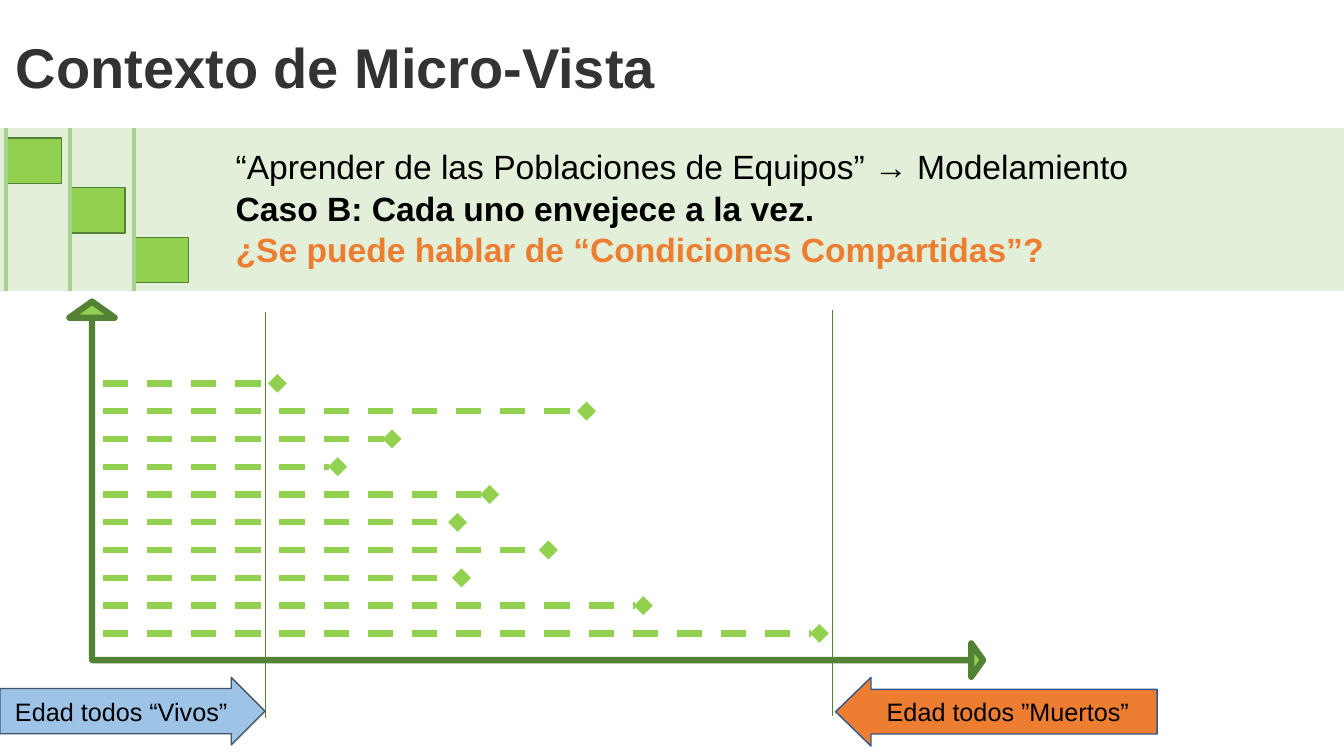
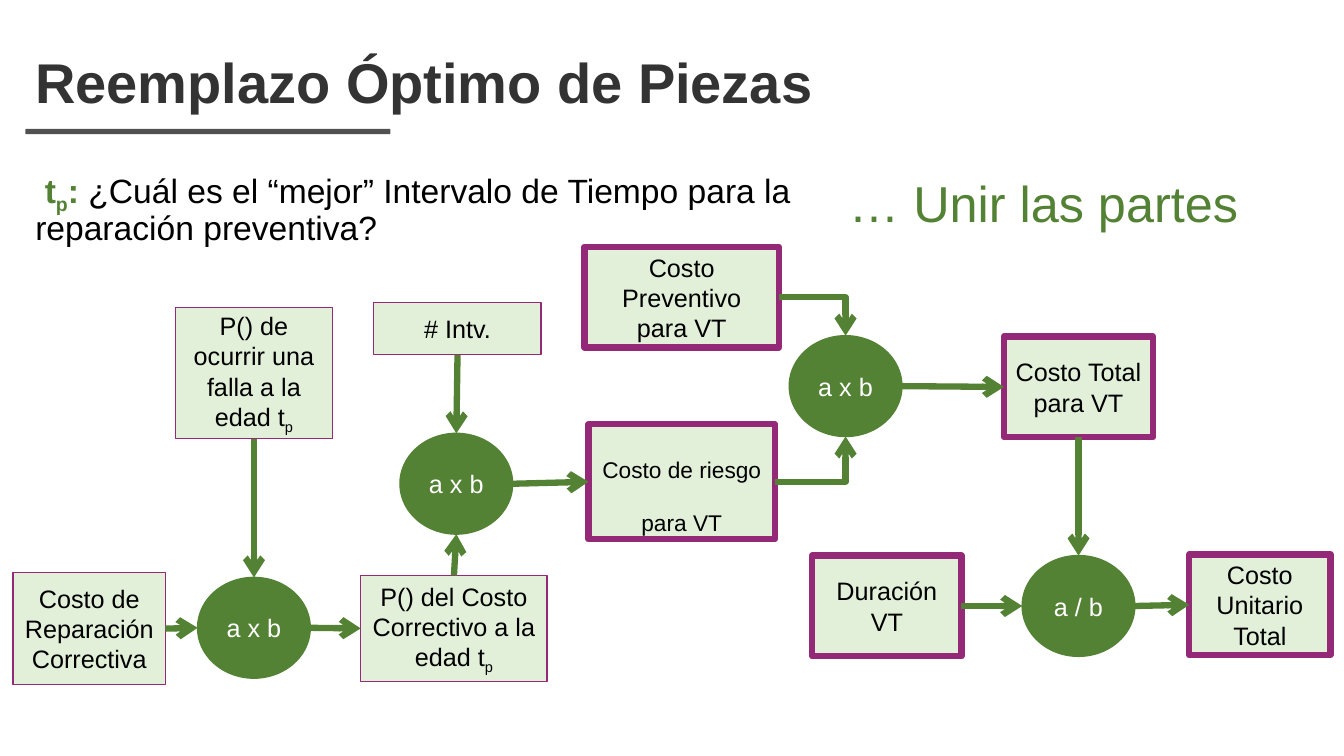
"""Builds two slides on ageing populations of equipment and optimal part replacement."""
from dataclasses import dataclass
from enum import IntEnum

from lxml import etree
from pptx import Presentation
from pptx import util as u
from pptx.dml.color import RGBColor
from pptx.enum import dml, shapes, text
from pptx.oxml.ns import qn
from pptx.slide import Slide

COLORS = {
    "title": "333333", "rule": "515151", "ink": "000000", "white": "FFFFFF",
    "pale": "E2F0D9", "lime": "92D050", "leaf": "A9D18E", "green": "548235",
    "purple": "942978", "orange": "ED7D31", "sky": "9DC3E6",
    "slate": "44546A", "navy": "325491",
}
FONT = "Arial"
SUBSCRIPT = "-25000"
KIND = shapes.MSO_SHAPE
CENTER = text.PP_ALIGN.CENTER


class Side(IntEnum):
    """Connection sites of a rectangle."""
    TOP = 0
    LEFT = 1
    BOTTOM = 2
    RIGHT = 3


@dataclass(frozen=True)
class Box:
    """Place of a shape in centimetres."""
    left: float
    top: float
    width: float
    height: float

    def emu(self) -> list[int]:
        """Return the place as lengths for python-pptx."""
        return [u.Cm(v) for v in (self.left, self.top, self.width, self.height)]

    def side(self, side: Side) -> tuple[float, float]:
        """Return the middle of one side."""
        x, y = self.left + self.width / 2, self.top + self.height / 2
        return {
            Side.TOP: (x, self.top), Side.LEFT: (self.left, y),
            Side.BOTTOM: (x, self.top + self.height), Side.RIGHT: (self.left + self.width, y),
        }[side]


@dataclass(frozen=True)
class Node:
    """Cost box or operator of the calculation."""
    name: str
    label: str
    box: Box
    border: float = 1
    sub: str = ""
    operator: bool = False


@dataclass(frozen=True)
class Link:
    """Arrow from one node to another."""
    start: str
    leaves: Side
    end: str
    enters: Side


@dataclass(frozen=True)
class AgeArrow:
    """Labelled block arrow below the age axis."""
    label: str
    kind: shapes.MSO_SHAPE
    box: Box
    adjustments: tuple[float, float]
    fill: str
    line: str


LIFE_ENDS = (6.99, 14.78, 9.88, 8.51, 12.34, 11.53, 13.82, 11.63, 16.21, 20.65)

AGE_ARROWS = (
    AgeArrow("Edad todos “Vivos”", KIND.RIGHT_ARROW, Box(0, 17.07, 6.68, 1.7),
             (0.67, 0.5), "sky", "slate"),
    AgeArrow("Edad todos ”Muertos”", KIND.LEFT_ARROW, Box(21.06, 17.07, 8.1, 1.73),
             (0.65, 0.515), "orange", "navy"),
)


def operator(name: str, label: str, left: float, top: float) -> Node:
    """Return a round operator node of the common size."""
    return Node(name, label, Box(left, top, 2.84, 2.54), operator=True)


NODES = (
    Node("reparación", "Costo de Reparación Correctiva", Box(0.33, 14.43, 3.84, 2.82)),
    Node("falla", "P() de ocurrir una falla a la edad t", Box(4.42, 7.75, 3.96, 3.3), sub="p"),
    Node("correctivo", "P() del Costo Correctivo a la edad t", Box(9.09, 14.5, 4.7, 2.67), sub="p"),
    Node("intervalos", "# Intv.", Box(9.42, 7.62, 4.22, 1.32)),
    Node("riesgo", "Costo de riesgo para VT", Box(14.83, 10.69, 4.7, 2.9), 4.5),
    Node("preventivo", "Costo Preventivo para VT", Box(14.73, 6.22, 4.9, 2.54), 4.5),
    Node("total", "Costo Total para VT", Box(25.3, 8.48, 3.76, 2.54), 4.5),
    Node("duración", "Duración VT", Box(20.47, 14, 3.76, 2.54), 4.5),
    Node("unitario", "Costo Unitario Total", Box(29.97, 13.97, 3.56, 2.54), 4.5),
    operator("por falla", "a x b", 4.98, 14.55),
    operator("por intervalo", "a x b", 10.08, 10.92),
    operator("por ciclo", "a x b", 19.89, 8.46),
    operator("por duración", "a / b", 25.76, 14),
)

LINKS = (
    Link("reparación", Side.RIGHT, "por falla", Side.LEFT),
    Link("falla", Side.BOTTOM, "por falla", Side.TOP),
    Link("por falla", Side.RIGHT, "correctivo", Side.LEFT),
    Link("correctivo", Side.TOP, "por intervalo", Side.BOTTOM),
    Link("intervalos", Side.BOTTOM, "por intervalo", Side.TOP),
    Link("por intervalo", Side.RIGHT, "riesgo", Side.LEFT),
    Link("preventivo", Side.RIGHT, "por ciclo", Side.TOP),
    Link("riesgo", Side.RIGHT, "por ciclo", Side.BOTTOM),
    Link("por ciclo", Side.RIGHT, "total", Side.LEFT),
    Link("total", Side.BOTTOM, "por duración", Side.TOP),
    Link("duración", Side.RIGHT, "por duración", Side.LEFT),
    Link("por duración", Side.RIGHT, "unitario", Side.LEFT),
)


def rgb(name: str) -> RGBColor:
    """Look up a colour."""
    return RGBColor.from_string(COLORS[name])


def style(font, size: float, color: str, bold: bool = False) -> None:
    """Set the face, size, colour and weight of a font."""
    font.name, font.size, font.bold = FONT, u.Pt(size), bold
    font.color.rgb = rgb(color)


def lower(run) -> None:
    """Turn a run into a subscript."""
    run.font._element.set("baseline", SUBSCRIPT)


def add_block(slide: Slide, kind, box: Box, fill: str, line: str = "", width: float = 1):
    """Add a filled preset shape without shadow."""
    block = slide.shapes.add_shape(kind, *box.emu())
    block.shadow.inherit = False
    block.fill.solid()
    block.fill.fore_color.rgb = rgb(fill)
    if line:
        block.line.color.rgb = rgb(line)
        block.line.width = u.Pt(width)
    else:
        block.line.fill.background()
    return block


def add_label(block, label: str, color: str = "ink", size: float = 18):
    """Write a centred label in a shape and return its paragraph."""
    block.text_frame.word_wrap = True
    block.text_frame.vertical_anchor = text.MSO_ANCHOR.MIDDLE
    paragraph = block.text_frame.paragraphs[0]
    paragraph.alignment = CENTER
    paragraph.add_run().text = label
    style(paragraph.font, size, color)
    return paragraph


def add_line(slide: Slide, start: tuple[float, float], end: tuple[float, float], color: str,
             width: float, tail: str = "", dashed: bool = False, bent: bool = False):
    """Add a connector, with an optional arrowhead, dash or single bend."""
    kind = shapes.MSO_CONNECTOR.ELBOW if bent else shapes.MSO_CONNECTOR.STRAIGHT
    connector = slide.shapes.add_connector(kind, *(u.Cm(v) for v in (*start, *end)))
    connector.line.color.rgb = rgb(color)
    connector.line.width = u.Pt(width)
    properties = connector._element.spPr
    if dashed:
        connector.line.dash_style = dml.MSO_LINE.DASH
    if tail:
        etree.SubElement(properties.find(qn("a:ln")), qn("a:tailEnd"), type=tail)
    if bent:
        properties.find(qn("a:prstGeom")).set("prst", "bentConnector2")
    etree.SubElement(properties, qn("a:effectLst"))
    return connector


def add_text(slide: Slide, box: Box):
    """Add a wrapping text box and return its frame."""
    frame = slide.shapes.add_textbox(*box.emu()).text_frame
    frame.word_wrap = True
    frame.paragraphs[0].line_spacing = 0.9
    return frame


def add_slide(deck, title: str, left: float, top: float) -> Slide:
    """Add a blank slide with the shared rule and title."""
    slide = deck.slides.add_slide(deck.slide_layouts[6])
    add_block(slide, KIND.ROUNDED_RECTANGLE, Box(0.64, 3.25, 9.2, 0.13), "rule")
    frame = add_text(slide, Box(left, top, 27.1, 2.39))
    frame.vertical_anchor = text.MSO_ANCHOR.BOTTOM
    frame.paragraphs[0].text = title
    style(frame.paragraphs[0].font, 40, "title", True)
    return slide


def add_band(slide: Slide) -> None:
    """Draw the pale band with its staggered squares and message."""
    band = Box(0, 3.23, 33.87, 4.1)
    add_block(slide, KIND.RECTANGLE, band, "pale")
    for step in range(3):
        square = Box(0.18 + 1.6 * step, 3.48 + 1.25 * step, 1.37, 1.14)
        add_block(slide, KIND.RECTANGLE, square, "lime", "green")
    for step in range(3):
        x = 0.15 + 1.61 * step
        add_line(slide, (x, band.top), (x, band.top + band.height), "leaf", 3)
    message = (
        ("“Aprender de las Poblaciones de Equipos” → Modelamiento", "ink", False),
        ("Caso B: Cada uno envejece a la vez.", "ink", True),
        ("¿Se puede hablar de “Condiciones Compartidas”?", "orange", True),
    )
    frame = add_text(slide, Box(5.69, 3.66, 28.17, 2.72))
    for index, (sentence, color, bold) in enumerate(message):
        paragraph = frame.add_paragraph() if index else frame.paragraphs[0]
        paragraph.text = sentence
        paragraph.line_spacing = 0.9
        if index:
            paragraph.space_before = u.Pt(4)
        style(paragraph.font, 24, color, bold)


def add_lives(slide: Slide) -> None:
    """Draw the axes, the life of each unit and the age limits."""
    for box, turn in ((Box(1.75, 7.6, 1.14, 9.02), 0), (Box(13.13, 5.41, 0.84, 22.45), 90)):
        axis = add_block(slide, KIND.UP_ARROW, box, "lime", "green", 4.5)
        axis.rotation = turn
        axis.adjustments[0], axis.adjustments[1] = 0, 0.357
    for row, end in enumerate(LIFE_ENDS):
        y = 9.66 + 0.7 * row
        add_line(slide, (2.59, y), (end, y), "lime", 4.5, "diamond", dashed=True)
    for x, top in ((6.68, 7.87), (20.98, 7.82)):
        add_line(slide, (x, top), (x, top + 10.21), "green", 0.5)
    for arrow in AGE_ARROWS:
        block = add_block(slide, arrow.kind, arrow.box, arrow.fill, arrow.line)
        block.adjustments[0], block.adjustments[1] = arrow.adjustments
        add_label(block, arrow.label)


def add_question(slide: Slide) -> None:
    """Write the question and the call to join the parts."""
    question = add_text(slide, Box(0.64, 4.16, 19.94, 2.6)).paragraphs[0]
    question._p.get_or_add_pPr().set("indent", str(u.Cm(0.24)))
    pieces = (
        ("t", "green", True), ("p", "green", True), (": ", "green", True),
        ("¿Cuál es el “mejor” Intervalo de Tiempo para la reparación preventiva?", "ink", False),
    )
    for words, color, bold in pieces:
        run = question.add_run()
        run.text = words
        style(run.font, 24, color, bold)
    lower(question.runs[1])
    call = add_text(slide, Box(17.93, 4.39, 16.74, 2.03)).paragraphs[0]
    call.text = "… Unir las partes"
    call.alignment = CENTER
    style(call.font, 36, "green")


def add_node(slide: Slide, node: Node):
    """Draw one cost box or operator."""
    if node.operator:
        block = add_block(slide, KIND.OVAL, node.box, "green", "green")
        add_label(block, node.label, "white")
        return block
    block = add_block(slide, KIND.RECTANGLE, node.box, "pale", "purple", node.border)
    lowered = node.name == "riesgo"
    label = add_label(block, node.label, size=28 if lowered else 18)
    if lowered:
        block.text_frame.vertical_anchor = text.MSO_ANCHOR.TOP
        lower(label.runs[0])
    if node.sub:
        run = label.add_run()
        run.text = node.sub
        lower(run)
    return block


def add_flow(slide: Slide) -> None:
    """Draw the nodes and join them with arrows."""
    nodes = {node.name: node for node in NODES}
    blocks = {node.name: add_node(slide, node) for node in NODES}
    for link in LINKS:
        start, end = nodes[link.start], nodes[link.end]
        bent = link.leaves % 2 != link.enters % 2
        arrow = add_line(slide, start.box.side(link.leaves), end.box.side(link.enters),
                         "green", 4.5, "arrow", bent=bent)
        if not bent and not start.operator:
            arrow.begin_connect(blocks[link.start], link.leaves)
        if not bent and not end.operator:
            arrow.end_connect(blocks[link.end], link.enters)


def main() -> None:
    """Build and save the presentation."""
    deck = Presentation()
    deck.slide_width, deck.slide_height = u.Cm(33.87), u.Cm(19.05)
    context = add_slide(deck, "Contexto de Micro-Vista", 0.15, 0.28)
    add_band(context)
    add_lives(context)
    replacement = add_slide(deck, "Reemplazo Óptimo de Piezas", 0.64, 0.64)
    add_question(replacement)
    add_flow(replacement)
    deck.save("out.pptx")


if __name__ == "__main__":
    main()
